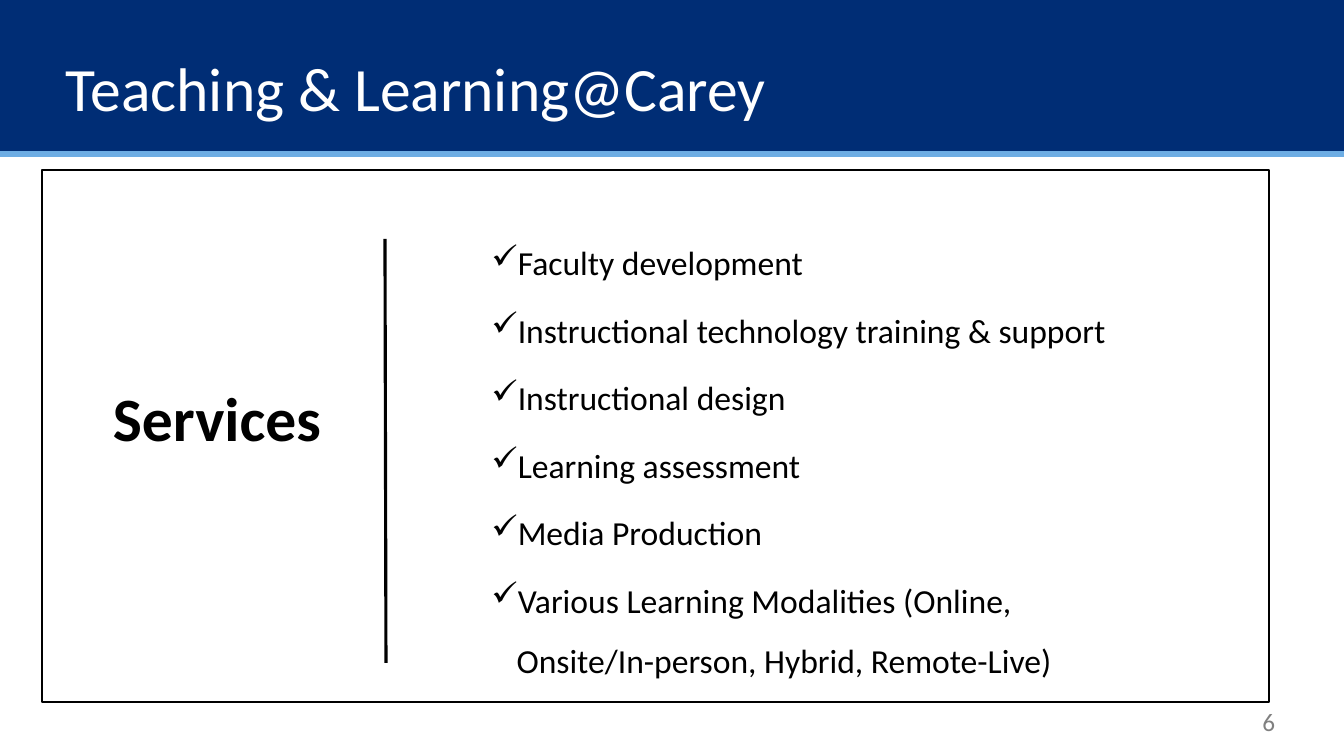
from pptx import Presentation
from pptx import util as u
from pptx.dml.color import RGBColor
from pptx.enum import shapes, text
from pptx.oxml.ns import qn
from lxml import etree

WIDE, HIGH = 1344, 756
SCALE = 12192000 / WIDE
FONT = {"name": "Calibri", "size": u.Pt(24), "bold": False}
BODY = {"line_spacing": 1.5, "space_before": u.Pt(5)}
SERVICES = [
    "Faculty development",
    "Instructional technology training & support",
    "Instructional design",
    "Learning assessment",
    "Media Production",
    "Various Learning Modalities (Online, Onsite/In-person, Hybrid, Remote-Live)",
]


def px(num):
    return u.Emu(round(num * SCALE))


def hue(code):
    return RGBColor.from_string(code)


def apply(item, form):
    for key, val in form.items():
        setattr(item, key, val)


def add_box(slide, area, fill=None, line=None):
    box = slide.shapes.add_shape(shapes.MSO_SHAPE.RECTANGLE, *map(px, area))
    box.shadow.inherit = False
    if fill:
        box.fill.solid()
        box.fill.fore_color.rgb = hue(fill)
    else:
        box.fill.background()
    if line:
        box.line.color.rgb = hue(line)
        box.line.width = u.Pt(1)
    else:
        box.line.fill.background()


def add_rule(slide, ends):
    rule = slide.shapes.add_connector(
        shapes.MSO_CONNECTOR.STRAIGHT, *map(px, ends))
    rule.line.color.rgb = hue("000000")
    rule.line.width = u.Pt(2.25)
    etree.SubElement(rule._element.spPr, qn("a:effectLst"))


def add_check(para):
    props = para._p.get_or_add_pPr()
    props.set("marL", str(u.Inches(0.75)))
    props.set("indent", str(u.Inches(-0.25)))
    etree.SubElement(props, qn("a:buChar")).set("char", "✓")


def add_text(slide, area, lines, color, font, form, check=False):
    frame = slide.shapes.add_textbox(*map(px, area)).text_frame
    frame.word_wrap = True
    for num, line in enumerate(lines):
        para = frame.add_paragraph() if num else frame.paragraphs[0]
        para.text = line
        if check:
            add_check(para)
        apply(para, form)
        if num == 0:
            para.space_before = u.Pt(0)
        apply(para.font, FONT | font)
        para.font.color.rgb = hue(color)


def main():
    deck = Presentation()
    deck.slide_width, deck.slide_height = px(WIDE), px(HIGH)
    slide = deck.slides.add_slide(deck.slide_layouts[6])
    head = {"size": u.Pt(44)}
    tight = {"line_spacing": 0.9}

    add_box(slide, (0, 0, WIDE, 151), fill="002D75")
    add_box(slide, (0, 151, WIDE, 6), fill="6DADE4")
    add_text(slide, (103, 383, 290, 124), ["Services"], "000000",
             head | {"bold": True}, tight)
    add_text(slide, (431, 217, 717, 480), SERVICES, "000000", {}, BODY, True)
    add_text(slide, (983, 701, 302, 40), ["6"], "808080",
             {"size": u.Pt(18)}, {"alignment": text.PP_ALIGN.RIGHT})
    add_rule(slide, (385, 239, 386, 663))
    add_box(slide, (42, 170, 1227, 532), line="000000")
    add_text(slide, (56, 53, 907, 98), ["Teaching & Learning@Carey"],
             "FFFFFF", head, tight)
    deck.save("out.pptx")


if __name__ == "__main__":
    main()
